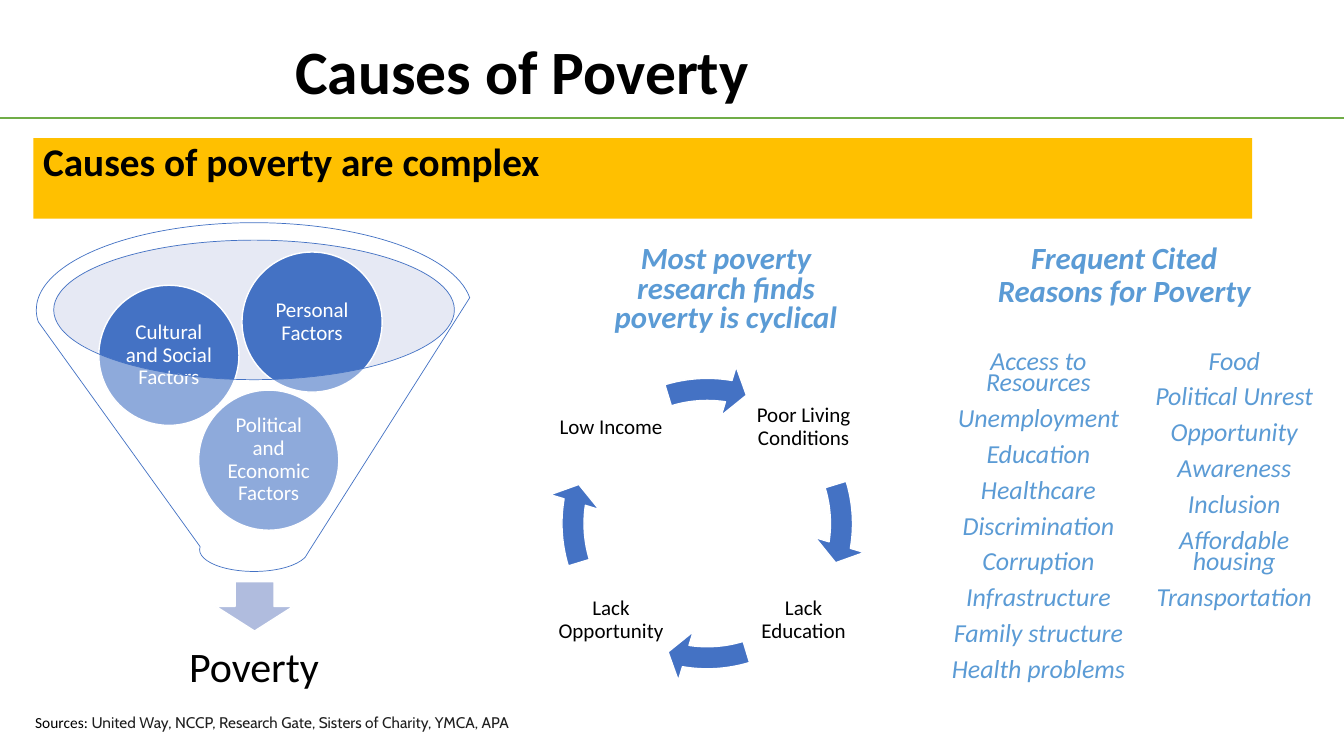
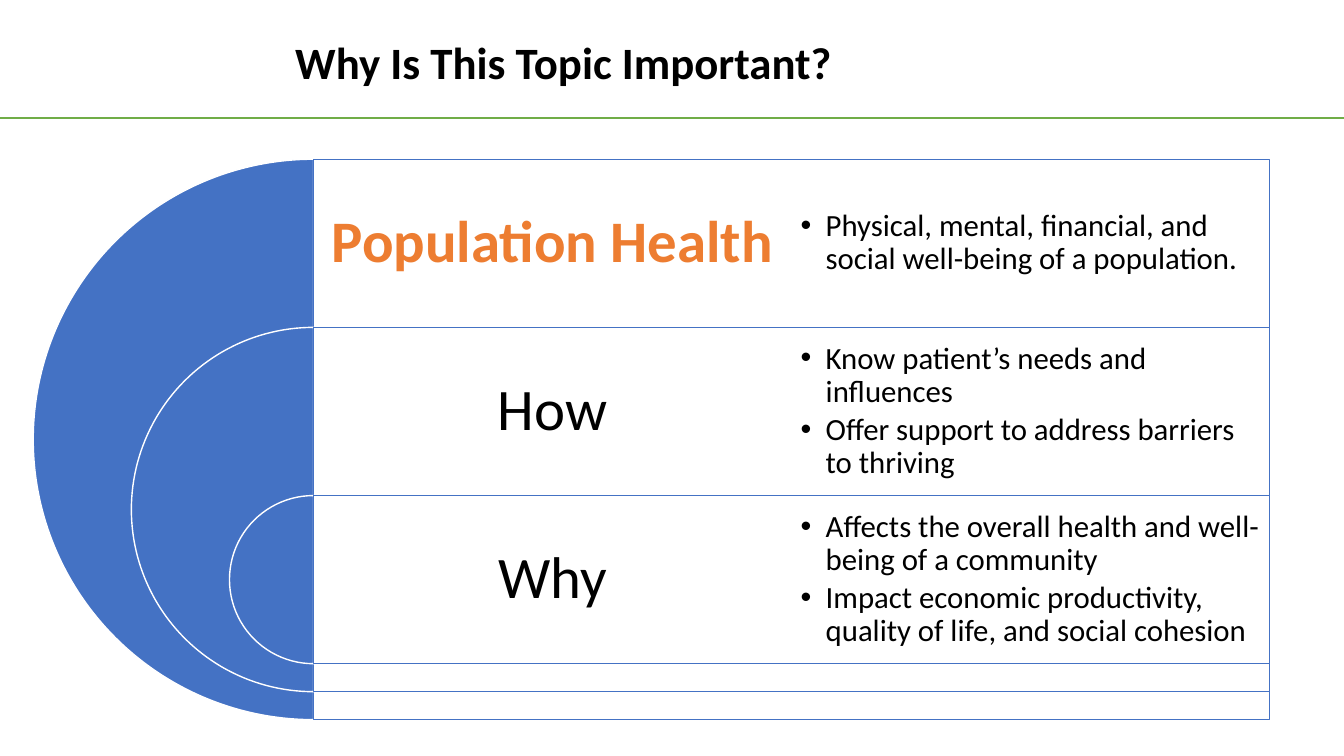
from dataclasses import dataclass

from lxml import etree
from pptx import Presentation
from pptx.dml.color import RGBColor
from pptx.enum.shapes import MSO_CONNECTOR, MSO_SHAPE
from pptx.enum.text import MSO_ANCHOR, PP_ALIGN
from pptx.oxml.ns import qn
from pptx.util import Pt

RECT, ELLIPSE, PIE = MSO_SHAPE.RECTANGLE, MSO_SHAPE.OVAL, MSO_SHAPE.PIE
FUNNEL, DOWN_ARROW = MSO_SHAPE.FUNNEL, MSO_SHAPE.DOWN_ARROW
CIRCULAR_ARROW = MSO_SHAPE.CIRCULAR_ARROW
STRAIGHT = MSO_CONNECTOR.STRAIGHT
LEFT, CENTER = PP_ALIGN.LEFT, PP_ALIGN.CENTER
TOP, MIDDLE = MSO_ANCHOR.TOP, MSO_ANCHOR.MIDDLE

SCALE = 9144
WIDTH, HEIGHT = 1333, 750


@dataclass(frozen=True)
class Theme:
    font: str = "Calibri"
    source_font: str = "Cabin"
    ink: str = "000000"
    source_ink: str = "1F1F1F"
    white: str = "FFFFFF"
    blue: str = "4472C4"
    sky: str = "5B9BD5"
    mouth: str = "C1C9E4"
    arrow: str = "B0BCDE"
    gold: str = "FFC000"
    orange: str = "ED7D31"
    green: str = "70AD47"
    title: float = 44
    small_title: float = 32
    band: float = 28
    row: float = 42
    result: float = 30
    heading: float = 22
    item: float = 18.5
    label: float = 15
    source: float = 11


T = Theme()


def px(n):
    return round(n * SCALE)


def rgb(color):
    return RGBColor.from_string(color)


def add_shape(s, kind, x, y, w, h, fill, line=None, weight=1, opacity=None, adj=()):
    sp = s.shapes.add_shape(kind, px(x), px(y), px(w), px(h))
    sp.shadow.inherit = False
    for i, value in enumerate(adj):
        sp.adjustments[i] = value
    sp.fill.solid()
    sp.fill.fore_color.rgb = rgb(fill)
    if opacity is not None:
        clr = sp.fill._xPr.find(".//" + qn("a:srgbClr"))
        etree.SubElement(clr, qn("a:alpha"), val=str(opacity * 1000))
    if line:
        sp.line.color.rgb = rgb(line)
        sp.line.width = Pt(weight)
    else:
        sp.line.fill.background()
    return sp


def write(sp, *paras, size, color=T.ink, font=T.font, bold=False, italic=False,
          align=LEFT, anchor=TOP, inset=None, spacing=0.9, before=0, after=0,
          bullet=False, columns=1):
    tf = sp.text_frame
    tf.word_wrap = True
    tf.vertical_anchor = anchor
    sides = (10, 5, 10, 5) if inset is None else (inset,) * 4
    tf.margin_left, tf.margin_top, tf.margin_right, tf.margin_bottom = map(px, sides)
    if columns > 1:
        tf._txBody.bodyPr.set("numCol", str(columns))
    for i, para in enumerate(paras):
        p = tf.paragraphs[0] if i == 0 else tf.add_paragraph()
        p.alignment = align
        p.line_spacing = spacing
        p.space_before = Pt(before if i else 0)
        p.space_after = Pt(after)
        if bullet:
            pPr = p._p.get_or_add_pPr()
            pPr.set("marL", str(px(25)))
            pPr.set("indent", str(px(-25)))
            etree.SubElement(pPr, qn("a:buFont"), typeface="Arial")
            etree.SubElement(pPr, qn("a:buChar"), char="•")
        runs = [(para, font, color)] if isinstance(para, str) else para
        for text, face, ink in runs:
            r = p.add_run()
            r.text = text
            r.font.name = face
            r.font.size = Pt(size)
            r.font.bold = bold
            r.font.italic = italic
            r.font.color.rgb = rgb(ink)


def add_text(s, x, y, w, h, *paras, **fmt):
    write(s.shapes.add_textbox(px(x), px(y), px(w), px(h)), *paras, **fmt)


def add_header(s, title, size):
    rule = s.shapes.add_connector(STRAIGHT, 0, px(117), px(WIDTH), px(117))
    rule.line.color.rgb = rgb(T.green)
    rule.line.width = Pt(1.25)
    etree.SubElement(rule._element.spPr, qn("a:effectLst"))
    add_text(s, 283, 36, 1033, 68, title, size=size, bold=True)


def add_funnel(s, x, y, w, h, factors, result):
    add_shape(s, ELLIPSE, x + 17, y + 17, w - 34, 138, T.mouth, opacity=40)
    add_shape(s, DOWN_ARROW, x + 178, y + 356, 77, 49, T.arrow, T.white)
    add_text(s, x + 31, y + h - 93, w - 62, 93, result, size=T.result,
             align=CENTER, anchor=MIDDLE, inset=23)
    for name, dx, dy in factors:
        sp = add_shape(s, ELLIPSE, x + dx, y + dy, 139, 139, T.blue, T.white)
        write(sp, name, size=T.label, color=T.white, align=CENTER,
              anchor=MIDDLE, inset=2)
    add_shape(s, FUNNEL, x, y, w, 346, T.white, T.blue, 0.5, opacity=40)


def add_cycle(s, x, y, w, h, steps):
    node, margin = 112, 7
    corners = ((1, 0), (1, 1), (0, 1), (0, 0))
    for i, (step, (col, row)) in enumerate(zip(steps, corners)):
        add_text(s, x + margin + col * (w - node - 2 * margin),
                 y + margin + row * (h - node - 2 * margin), node, node, step,
                 size=T.label, align=CENTER, anchor=MIDDLE, inset=2)
        turn = 54 * i
        add_shape(s, CIRCULAR_ARROW, x, y, w, h, T.blue, T.white,
                  adj=(0.069, 4.647, 5.524 + turn, (205.83 + turn) % 216, 0.08))


def add_heading(s, x, y, w, h, text, spacing):
    add_text(s, x, y, w, h, text, size=T.heading, color=T.sky, bold=True,
             italic=True, align=CENTER, spacing=spacing)


def add_target(s, x, y, w, h, rows):
    left = x + h / 2
    rect_w = w - h / 2
    half = rect_w / 2
    row_h = 0.3 * h
    for i, (name, color, bold, points) in enumerate(rows):
        top = y + i * row_h
        d = h * (1 - 0.35 * i)
        add_shape(s, PIE, left - d / 2, top, d, d, T.blue, T.white, adj=(54, 162))
        add_shape(s, RECT, left, top, rect_w, d, T.white, T.blue, opacity=90)
        add_text(s, left, top, half, row_h, name, size=T.row, color=color,
                 bold=bold, align=CENTER, anchor=MIDDLE, inset=17)
        add_text(s, left + half, top, half, row_h, *points, size=T.heading,
                 anchor=MIDDLE, inset=9, after=3.5, bullet=True)


def build_causes(s):
    add_header(s, "Causes of Poverty", T.title)
    band = add_shape(s, RECT, 33, 137, 1209, 80, T.gold)
    write(band, "Causes of poverty are complex", size=T.band, bold=True)
    add_funnel(s, 36, 221, 432, 489, (
        ("Political and Economic Factors", 161, 166),
        ("Cultural and Social Factors", 62, 62),
        ("Personal Factors", 204, 29),
    ), "Poverty")
    add_cycle(s, 543, 361, 317, 317, (
        "Poor Living Conditions", "Lack Education", "Lack Opportunity", "Low Income"))
    add_heading(s, 572, 239, 296, 106,
                "Most poverty research finds poverty is cyclical", 0.8)
    add_text(s, 923, 345, 408, 369,
             "Access to Resources", "Unemployment", "Education", "Healthcare",
             "Discrimination", "Corruption", "Infrastructure", "Family structure",
             "Health problems", "Food", "Political Unrest", "Opportunity",
             "Awareness", "Inclusion", "Affordable housing", "Transportation",
             size=T.item, color=T.sky, italic=True, align=CENTER, spacing=0.7,
             before=10, columns=2)
    add_heading(s, 967, 236, 296, 106, "Frequent Cited Reasons for Poverty", 0.9)
    add_text(s, 25, 703, 1030, 47, (
        ("Sources: ", T.font, T.ink),
        ("United Way, NCCP, Research Gate, Sisters of Charity, YMCA, APA",
         T.source_font, T.source_ink),
    ), size=T.source, spacing=1.0)


def build_importance(s):
    add_target(s, 33, 158, 1226, 556, (
        ("Population Health", T.orange, True,
         ("Physical, mental, financial, and social well-being of a population.",)),
        ("How", T.ink, False,
         ("Know patient’s needs and influences",
          "Offer support to address barriers to thriving")),
        ("Why", T.ink, False,
         ("Affects the overall health and well-being of a community",
          "Impact economic productivity, quality of life, and social cohesion")),
    ))
    add_header(s, "Why Is This Topic Important?", T.small_title)


def main():
    prs = Presentation()
    prs.slide_width, prs.slide_height = px(WIDTH), px(HEIGHT)
    blank = prs.slide_layouts[6]
    for build in (build_causes, build_importance):
        build(prs.slides.add_slide(blank))
    prs.save("out.pptx")


if __name__ == "__main__":
    main()
